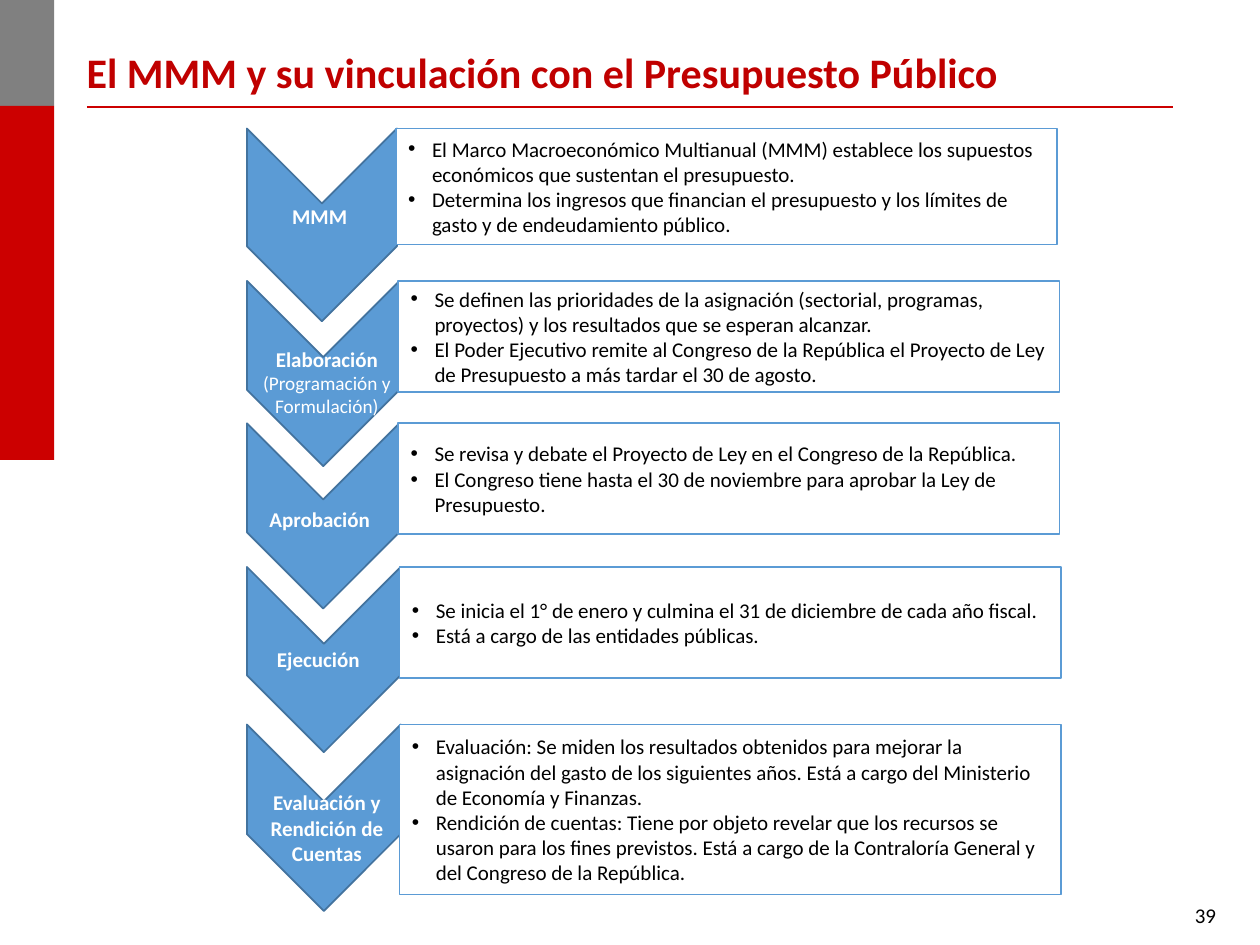
from lxml import etree
from pptx import Presentation
from pptx.dml.color import RGBColor
from pptx.enum.shapes import MSO_CONNECTOR, MSO_SHAPE
from pptx.enum.text import MSO_ANCHOR, PP_ALIGN
from pptx.oxml.ns import qn
from pptx.util import Inches, Pt

RECTANGLE, CHEVRON = MSO_SHAPE.RECTANGLE, MSO_SHAPE.CHEVRON
STRAIGHT = MSO_CONNECTOR.STRAIGHT
TOP, MIDDLE = MSO_ANCHOR.TOP, MSO_ANCHOR.MIDDLE
LEFT, CENTER, RIGHT = PP_ALIGN.LEFT, PP_ALIGN.CENTER, PP_ALIGN.RIGHT

COLUMNS, ROWS = 100, 75
CHEVRON_LEFT, BOX_WIDTH = 19.6, 52.5

# Each stage: top, box left, box height, chevron height, label place, label alignment, label runs, bullets
STAGES = [
    (10.2, 31.4, 9.2, 15.3, (22.2, 15.7, 9.2, 3), LEFT, [("MMM", 12, True)], [
        "El Marco Macroeconómico Multianual (MMM) establece los supuestos económicos que sustentan el presupuesto.",
        "Determina los ingresos que financian el presupuesto y los límites de gasto y de endeudamiento público.",
    ]),
    (22.3, 31.6, 8.8, 14.7, (19.6, 27, 12.7, 6.7), CENTER,
     [("Elaboración ", 12, True), ("(Programación y Formulación)", 11, False)], [
        "Se definen las prioridades de la asignación (sectorial, programas, proyectos) y los resultados "
        "que se esperan alcanzar.",
        "El Poder Ejecutivo remite al Congreso de la República el Proyecto de Ley de Presupuesto "
        "a más tardar el 30 de agosto.",
    ]),
    (33.6, 31.6, 8.8, 14.7, (20.4, 39.7, 11.7, 3), LEFT, [("Aprobación", 12, True)], [
        "Se revisa y debate el Proyecto de Ley en el Congreso de la República.",
        "El Congreso tiene hasta el 30 de noviembre para aprobar la Ley de Presupuesto.",
    ]),
    (45, 31.7, 8.8, 14.7, (21, 50.8, 11.7, 3), LEFT, [("Ejecución", 12, True)], [
        "Se inicia el 1° de enero y culmina el 31 de diciembre de cada año fiscal.",
        "Está a cargo de las entidades públicas.",
    ]),
    (57.5, 31.7, 13.5, 14.8, (20.1, 62.2, 11.7, 7.1), CENTER,
     [("Evaluación y Rendición de Cuentas", 12, True)], [
        "Evaluación: Se miden los resultados obtenidos para mejorar la asignación del gasto de los "
        "siguientes años. Está a cargo del Ministerio de Economía y Finanzas.",
        "Rendición de cuentas: Tiene por objeto revelar que los recursos se usaron para los fines "
        "previstos. Está a cargo de la Contraloría General y del Congreso de la República.",
    ]),
]


def color(value):
    return RGBColor.from_string(value)


class SlideBuilder:
    """Draws styled elements on one slide, placed by grid columns and rows."""

    font = "Calibri"
    red, gray, title_red = "CC0000", "808080", "C00000"
    blue, dark_blue = "5B9BD5", "43739E"
    white, black = "FFFFFF", "000000"

    def __init__(self, presentation):
        self.width, self.height = presentation.slide_width, presentation.slide_height
        self.slide = presentation.slides.add_slide(presentation.slide_layouts[6])

    def place(self, left, top, width, height):
        column, row = self.width / COLUMNS, self.height / ROWS
        return round(left * column), round(top * row), round(width * column), round(height * row)

    def style(self, font, size, text_color, bold=False):
        font.name, font.size, font.bold = self.font, Pt(size), bold
        font.color.rgb = color(text_color)

    def shape(self, kind, place, fill, line=None):
        shape = self.slide.shapes.add_shape(kind, *self.place(*place))
        shape.shadow.inherit = False
        shape.fill.solid()
        shape.fill.fore_color.rgb = color(fill)
        if line:
            shape.line.color.rgb = color(line)
            shape.line.width = Pt(1)
        else:
            shape.line.fill.background()
        return shape

    def rule(self, left, right, row):
        x, y, length, _ = self.place(left, row, right - left, 0)
        connector = self.slide.shapes.add_connector(STRAIGHT, x, y, x + length, y)
        connector.line.color.rgb = color(self.red)
        connector.line.width = Pt(1)
        etree.SubElement(connector._element.spPr, qn("a:effectLst"))

    def text(self, place, runs, text_color, alignment=LEFT, anchor=TOP):
        frame = self.slide.shapes.add_textbox(*self.place(*place)).text_frame
        frame.word_wrap = True
        frame.vertical_anchor = anchor
        paragraph = frame.paragraphs[0]
        paragraph.alignment = alignment
        for content, size, bold in runs:
            run = paragraph.add_run()
            run.text = content
            self.style(run.font, size, text_color, bold)

    def down_chevron(self, left, top, width, height):
        shift = (height - width) / 2
        place = (left - shift, top + shift, height, width)
        self.shape(CHEVRON, place, self.blue, self.dark_blue).rotation = 90

    def bullet_box(self, place, bullets):
        frame = self.shape(RECTANGLE, place, self.white, self.blue).text_frame
        frame.word_wrap = True
        frame.vertical_anchor = MIDDLE
        frame.text = "\n".join(bullets)
        indent = Inches(0.19)
        for paragraph in frame.paragraphs:
            paragraph.alignment = LEFT
            self.style(paragraph.font, 12, self.black)
            properties = paragraph._p.get_or_add_pPr()
            properties.set("marL", str(indent))
            properties.set("indent", str(-indent))
            bullet_font = etree.Element(qn("a:buFont"), typeface="Arial")
            bullet = etree.Element(qn("a:buChar"), char="•")
            properties.insert(0, bullet_font)
            properties.insert(1, bullet)

    def stage(self, top, box_left, box_height, chevron_height, label_place, alignment, label, bullets):
        self.down_chevron(CHEVRON_LEFT, top, box_left - CHEVRON_LEFT + 0.1, chevron_height)
        self.bullet_box((box_left, top, BOX_WIDTH, box_height), bullets)
        self.text(label_place, label, self.white, alignment)


def main():
    presentation = Presentation()
    presentation.slide_width, presentation.slide_height = Inches(10), Inches(7.5)
    builder = SlideBuilder(presentation)
    builder.rule(6.9, 93.1, 8.5)
    builder.shape(RECTANGLE, (0, 0, 4.3, 8.4), builder.gray)
    builder.shape(RECTANGLE, (0, 8.4, 4.3, 28.1), builder.red)
    builder.text((74.2, 71.1, 23.3, 3.9), [("39", 12, False)], builder.black, RIGHT)
    title = "El MMM y su vinculación con el Presupuesto Público"
    builder.text((5.9, 2.2, 86.6, 6.9), [(title, 24, True)], builder.title_red, anchor=MIDDLE)
    for stage in STAGES:
        builder.stage(*stage)
    presentation.save("out.pptx")


if __name__ == "__main__":
    main()
